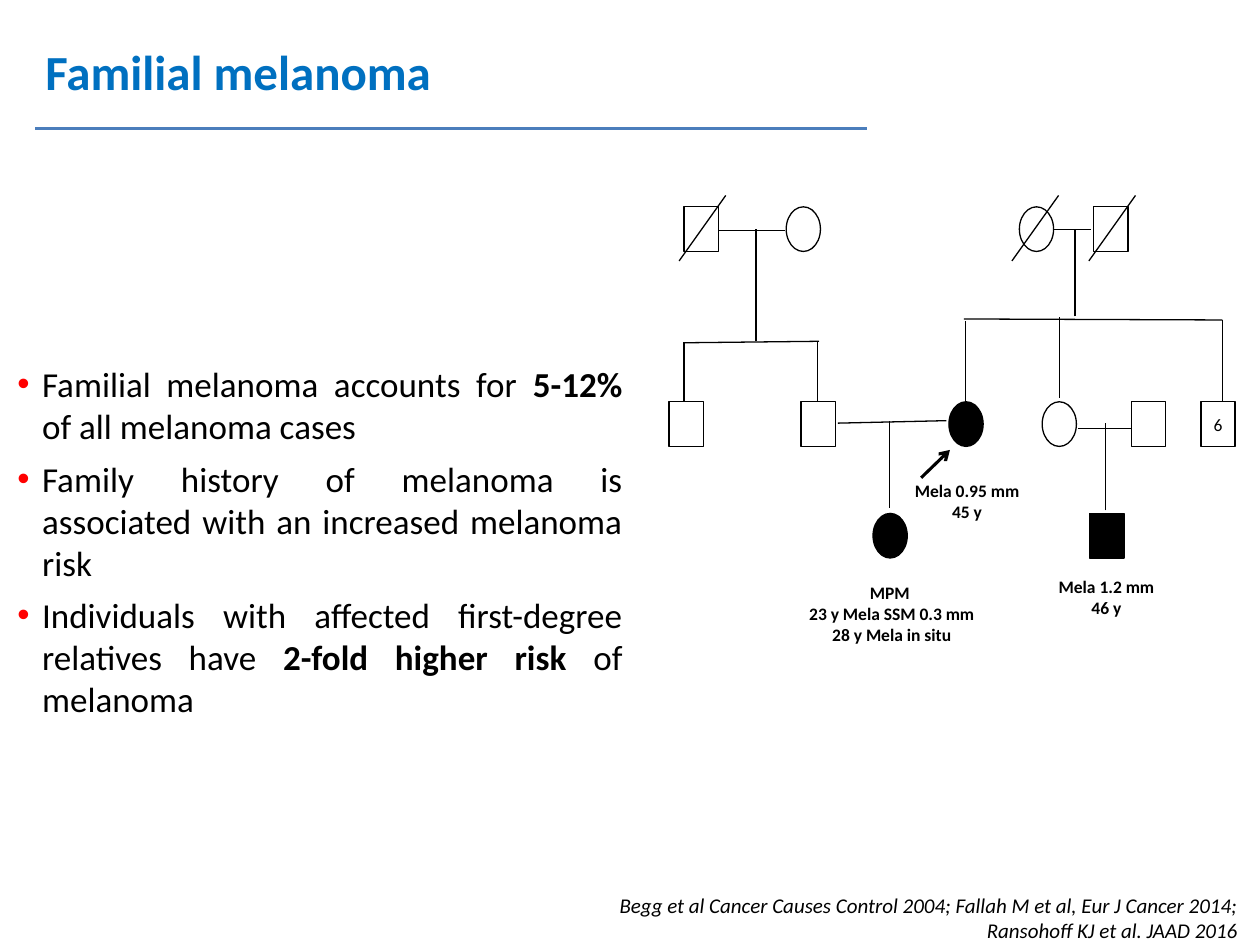
import dataclasses

import lxml.etree
import pptx
import pptx.dml.color
import pptx.enum.shapes
import pptx.enum.text
import pptx.oxml.ns
import pptx.util

Cm = pptx.util.Cm
Pt = pptx.util.Pt
Align = pptx.enum.text.PP_ALIGN
Anchor = pptx.enum.text.MSO_ANCHOR
Shape = pptx.enum.shapes.MSO_SHAPE
qn = pptx.oxml.ns.qn


@dataclasses.dataclass(frozen=True)
class Theme:
    font: str = "Calibri"
    title_color: str = "0070C0"
    rule_color: str = "4B7EBC"
    bullet_color: str = "FF0000"
    black: str = "000000"
    white: str = "FFFFFF"
    title_size: int = 28
    body_size: int = 20
    citation_size: int = 12
    label_size: int = 10
    thin: float = 0.75
    arrow: float = 1.75
    rule: float = 2.25


THEME = Theme()
SYMBOL_WIDTH, SYMBOL_HEIGHT = 0.69, 0.9
GRANDPARENTS, PARENTS, CHILDREN = 4.17, 8.1, 10.35

FAMILY_LINES = [
    (21.21, 4.62, 22, 4.62),
    (21.67, 6.38, 21.67, 4.62),
    (19.43, 6.43, 24.64, 6.45),
    (19.46, 6.48, 19.46, 8.1),
    (14.48, 4.65, 15.82, 4.65),
    (17.93, 10.24, 17.93, 8.48),
    (24.64, 8.2, 24.64, 6.45),
    (13.77, 6.91, 16.51, 6.88),
    (13.79, 8.66, 13.79, 6.91),
    (15.24, 6.88, 15.24, 4.62),
    (16.48, 8.33, 16.48, 6.88),
    (16.89, 8.53, 19.08, 8.48),
    (21.74, 8.64, 22.81, 8.64),
    (22.28, 10.29, 22.28, 8.53),
    (21.36, 6.4, 21.36, 8.03),
]
MEN = [
    (13.79, GRANDPARENTS, False, ""),
    (22.05, GRANDPARENTS, False, ""),
    (13.49, PARENTS, False, ""),
    (16.15, PARENTS, False, ""),
    (22.81, PARENTS, False, ""),
    (24.21, PARENTS, False, "6"),
    (21.97, CHILDREN, True, ""),
]
WOMEN = [
    (15.85, GRANDPARENTS, False, ""),
    (20.55, GRANDPARENTS, False, ""),
    (19.13, PARENTS, True, ""),
    (21.01, PARENTS, False, ""),
    (17.6, CHILDREN, True, ""),
]
DECEASED = [13.69, 20.4, 21.95]
LABELS = [
    ((15.93, 11.61, 4.09, 1.52), ["MPM ", "23 y Mela SSM 0.3 mm", "28 y Mela in situ"]),
    ((18.11, 9.55, 2.77, 1.09), ["Mela 0.95 mm", "45 y"]),
    ((21.01, 11.48, 2.59, 1.09), ["Mela 1.2 mm", "46 y"]),
]
FINDINGS = [
    "Familial melanoma accounts for **5-12%** of all melanoma cases",
    "Family history of melanoma is associated with an increased melanoma risk",
    "Individuals with affected first-degree relatives have **2-fold higher risk **of melanoma",
]
CITATIONS = [
    "Begg et al Cancer Causes Control 2004; Fallah M et al, Eur J Cancer 2014; ",
    "Ransohoff KJ et al. JAAD 2016 ",
]


def rgb(color):
    """Turn a hexadecimal string into a colour."""
    return pptx.dml.color.RGBColor.from_string(color)


def add_bullet(paragraph, color):
    """Give a paragraph a coloured bullet with a hanging indent."""
    properties = paragraph._p.get_or_add_pPr()
    properties.set("marL", str(Cm(0.5)))
    properties.set("indent", str(Cm(-0.5)))
    bullet_color = lxml.etree.SubElement(properties, qn("a:buClr"))
    lxml.etree.SubElement(bullet_color, qn("a:srgbClr"), val=color)
    lxml.etree.SubElement(properties, qn("a:buFont"), typeface="Arial")
    lxml.etree.SubElement(properties, qn("a:buChar"), char="•")


def write_text(frame, lines, size, color=THEME.black, bold=False, italic=False,
               align=Align.LEFT, anchor=Anchor.TOP, wrap=True, after=0, bullet=None):
    """Write one paragraph per line, with **marked** parts in bold."""
    frame.word_wrap = wrap
    frame.vertical_anchor = anchor
    for index, line in enumerate(lines):
        paragraph = frame.add_paragraph() if index else frame.paragraphs[0]
        paragraph.alignment = align
        paragraph.space_after = Pt(after)
        if bullet:
            add_bullet(paragraph, bullet)
        for position, part in enumerate(line.split("**")):
            run = paragraph.add_run()
            run.text = part
            run.font.name = THEME.font
            run.font.size = Pt(size)
            run.font.color.rgb = rgb(color)
            run.font.bold = bold or position % 2 == 1
            run.font.italic = italic


class SlideBuilder:
    """Hold the theme and the current slide."""

    def __init__(self, presentation, theme):
        """Add a title-only slide."""
        self.theme = theme
        self.slide = presentation.slides.add_slide(presentation.slide_layouts[5])

    def title(self, text, box):
        """Place and format the title placeholder."""
        shape = self.slide.shapes.title
        shape.left, shape.top, shape.width, shape.height = map(Cm, box)
        write_text(shape.text_frame, [text], self.theme.title_size,
                   color=self.theme.title_color, bold=True, anchor=Anchor.MIDDLE)

    def text(self, lines, box, size, **text_format):
        """Add a text box."""
        shape = self.slide.shapes.add_textbox(*map(Cm, box))
        write_text(shape.text_frame, lines, size, **text_format)

    def line(self, ends, width, color, head=False):
        """Add a straight line, with an arrowhead at its end if wanted."""
        connector = self.slide.shapes.add_connector(
            pptx.enum.shapes.MSO_CONNECTOR.STRAIGHT, *map(Cm, ends))
        connector.line.width = Pt(width)
        connector.line.color.rgb = rgb(color)
        if head:
            lxml.etree.SubElement(connector.line._get_or_add_ln(), qn("a:tailEnd"), type="arrow")
        lxml.etree.SubElement(connector._element.spPr, qn("a:effectLst"))

    def person(self, kind, left, top, affected, text):
        """Add a pedigree symbol."""
        shape = self.slide.shapes.add_shape(
            kind, Cm(left), Cm(top), Cm(SYMBOL_WIDTH), Cm(SYMBOL_HEIGHT))
        shape.shadow.inherit = False
        shape.fill.solid()
        shape.fill.fore_color.rgb = rgb(self.theme.black if affected else self.theme.white)
        shape.line.color.rgb = rgb(self.theme.black)
        shape.line.width = Pt(self.theme.thin)
        if text:
            write_text(shape.text_frame, [text], self.theme.label_size,
                       align=Align.CENTER, anchor=Anchor.MIDDLE, wrap=False)


def main():
    """Build and save the slide."""
    presentation = pptx.Presentation()
    presentation.slide_width, presentation.slide_height = Cm(25.4), Cm(19.05)
    builder = SlideBuilder(presentation, THEME)
    builder.title("Familial melanoma", (0.66, 0.43, 25.22, 1.98))
    builder.line((0.71, 2.59, 17.48, 2.59), THEME.rule, THEME.rule_color)
    builder.text(FINDINGS, (0.1, 7.19, 12.7, 7.52), THEME.body_size,
                 align=Align.JUSTIFY, after=6, bullet=THEME.bullet_color)
    for ends in FAMILY_LINES:
        builder.line(ends, THEME.thin, THEME.black)
    for kind, people in ((Shape.RECTANGLE, MEN), (Shape.OVAL, WOMEN)):
        for person in people:
            builder.person(kind, *person)
    for left in DECEASED:
        builder.line((left + 0.94, 3.94, left, 5.26), THEME.thin, THEME.black)
    builder.line((18.57, 9.63, 19.15, 9.07), THEME.arrow, THEME.black, head=True)
    for box, lines in LABELS:
        builder.text(lines, box, THEME.label_size, bold=True, align=Align.CENTER, wrap=False)
    builder.text(CITATIONS, (12.09, 17.86, 13.21, 1.27), THEME.citation_size,
                 italic=True, align=Align.RIGHT)
    presentation.save("out.pptx")


if __name__ == "__main__":
    main()
